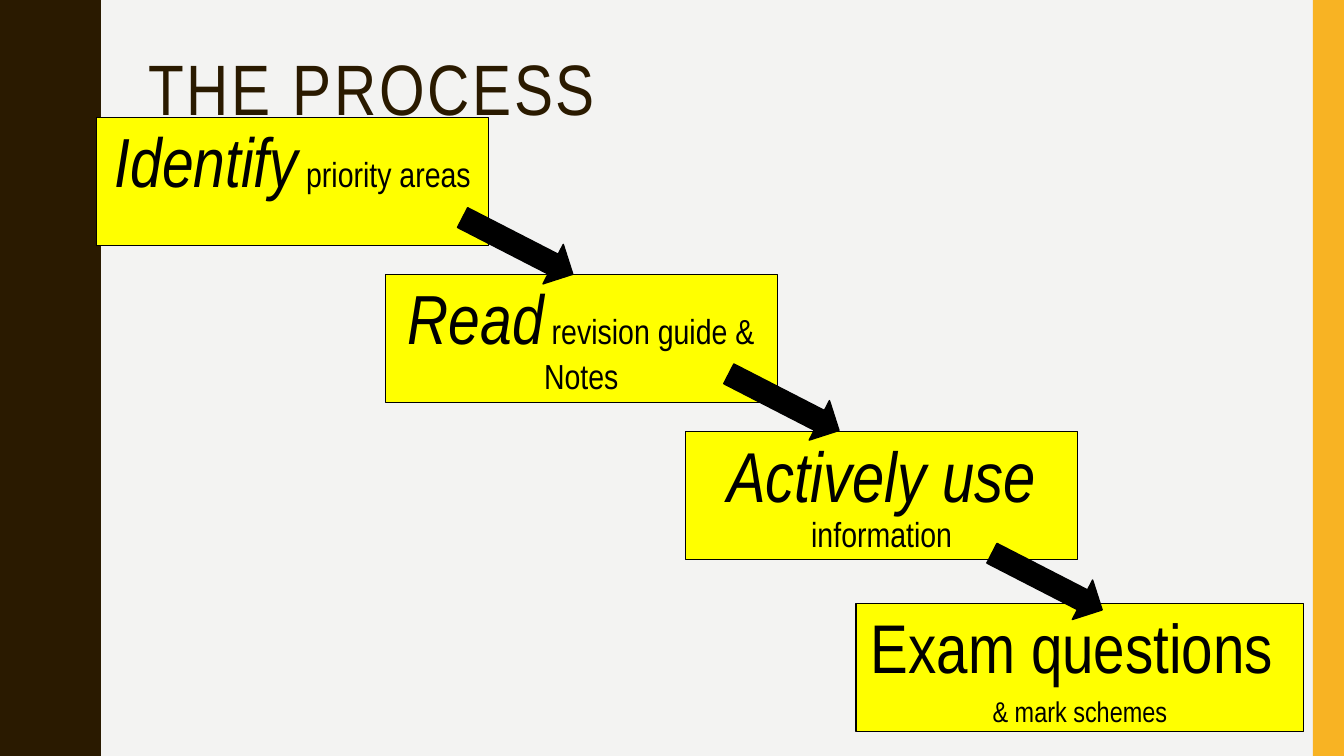
import pptx
import pptx.dml.color
import pptx.enum.shapes
import pptx.enum.text
import pptx.util

Inches = pptx.util.Inches
Pt = pptx.util.Pt
SHAPES = pptx.enum.shapes.MSO_SHAPE
ALIGN = pptx.enum.text.PP_ALIGN
ANCHOR = pptx.enum.text.MSO_ANCHOR

FONT = "Arial Narrow"
BROWN, AMBER, YELLOW, BLACK, PAPER = "2A1A00", "F8B323", "FFFF00", "000000", "F3F3F2"
WIDTH, HEIGHT = 13.33, 7.5
WAVE_PERIOD = 1.5
WAVE_RISE = [(0.78, 0), (0.78, 0.07), (0.79, 0.14), (0.8, 0.2), (0.81, 0.25),
             (0.83, 0.29), (0.85, 0.33), (0.87, 0.38), (0.89, 0.42), (0.91, 0.46),
             (0.93, 0.5), (0.95, 0.55), (0.96, 0.61), (0.97, 0.68), (0.97, 0.75)]
STEPS = [
    ((0.96, 1.17, 3.89, 1.27),
     [[("Identify", 49.6, True), (" priority areas", 24.8, False)]]),
    ((3.82, 2.72, 3.89, 1.27),
     [[("Read", 49.6, True), (" revision guide & Notes", 24.8, False)]]),
    ((6.8, 4.28, 3.89, 1.27),
     [[("Actively use ", 50.4, True), ("information", 24.8, False)]]),
    ((8.49, 5.99, 4.44, 1.27),
     [[("Exam questions ", 49.2, False)], [("& mark schemes", 20.4, False)]]),
]
ARROWS = [(4.52, 2.22), (7.16, 3.77), (9.77, 5.55)]


def color(value):
    """Turn a hex string into a colour."""
    return pptx.dml.color.RGBColor.from_string(value)


def paint(shape, fill, line=None, line_width=0.75):
    """Give a shape a flat fill and an optional outline."""
    shape.shadow.inherit = False
    shape.fill.solid()
    shape.fill.fore_color.rgb = color(fill)
    if line:
        shape.line.color.rgb = color(line)
        shape.line.width = Pt(line_width)
    else:
        shape.line.fill.background()


def add_box(slide, kind, box, fill, line=None, line_width=0.75):
    """Add a painted preset shape in the given box."""
    shape = slide.shapes.add_shape(kind, *map(Inches, box))
    paint(shape, fill, line, line_width)
    return shape


def add_run(paragraph, text, size, text_color, italic=False):
    """Append one formatted run."""
    run = paragraph.add_run()
    run.text = text
    run.font.name = FONT
    run.font.size = Pt(size)
    run.font.italic = italic
    run.font.color.rgb = color(text_color)
    return run


def add_wavy_edge(slide, height):
    """Draw the dark left band whose right edge is a repeating wave."""
    period = WAVE_RISE + [(x, WAVE_PERIOD - y) for x, y in WAVE_RISE[-2::-1]]
    points = [(x, y + WAVE_PERIOD * index)
              for index in range(round(height / WAVE_PERIOD)) for x, y in period]
    builder = slide.shapes.build_freeform(0, 0, scale=Inches(1))
    builder.add_line_segments(points + [(0, height)], close=True)
    paint(builder.convert_to_shape(), BROWN)


def add_title(slide, box, text):
    """Add the slide title."""
    frame = slide.shapes.add_textbox(*map(Inches, box)).text_frame
    frame.word_wrap = True
    frame.vertical_anchor = ANCHOR.MIDDLE
    paragraph = frame.paragraphs[0]
    paragraph.line_spacing = 0.9
    run = add_run(paragraph, text, 51, BROWN)
    run.font._element.set("spc", "200")


def add_step(slide, box, paragraphs):
    """Add one yellow step with its centred text."""
    frame = add_box(slide, SHAPES.RECTANGLE, box, YELLOW, BLACK).text_frame
    frame.word_wrap = True
    frame.vertical_anchor = ANCHOR.TOP
    frame.margin_top = Inches(0.1)
    for index, runs in enumerate(paragraphs):
        paragraph = frame.add_paragraph() if index else frame.paragraphs[0]
        paragraph.alignment = ALIGN.CENTER
        paragraph.line_spacing = 0.9
        paragraph.space_before = Pt(7 if index else 0)
        for text, size, italic in runs:
            add_run(paragraph, text, size, BLACK, italic)


def add_arrow(slide, left, top):
    """Add a slanted arrow leading to the next step."""
    arrow = add_box(slide, SHAPES.RIGHT_ARROW, (left, top, 1.23, 0.44), BLACK, BLACK, 1)
    arrow.rotation = 27.2


def main():
    """Build and save the process slide."""
    presentation = pptx.Presentation()
    presentation.slide_width = Inches(WIDTH)
    presentation.slide_height = Inches(HEIGHT)
    slide = presentation.slides.add_slide(presentation.slide_layouts[6])
    slide.background.fill.solid()
    slide.background.fill.fore_color.rgb = color(PAPER)
    add_wavy_edge(slide, HEIGHT)
    add_box(slide, SHAPES.RECTANGLE, (WIDTH - 0.31, 0, 0.31, HEIGHT), AMBER)
    add_title(slide, (1.37, 0.42, 11.13, 0.99), "THE PROCESS")
    for box, paragraphs in STEPS:
        add_step(slide, box, paragraphs)
    for left, top in ARROWS:
        add_arrow(slide, left, top)
    presentation.save("out.pptx")


if __name__ == "__main__":
    main()
